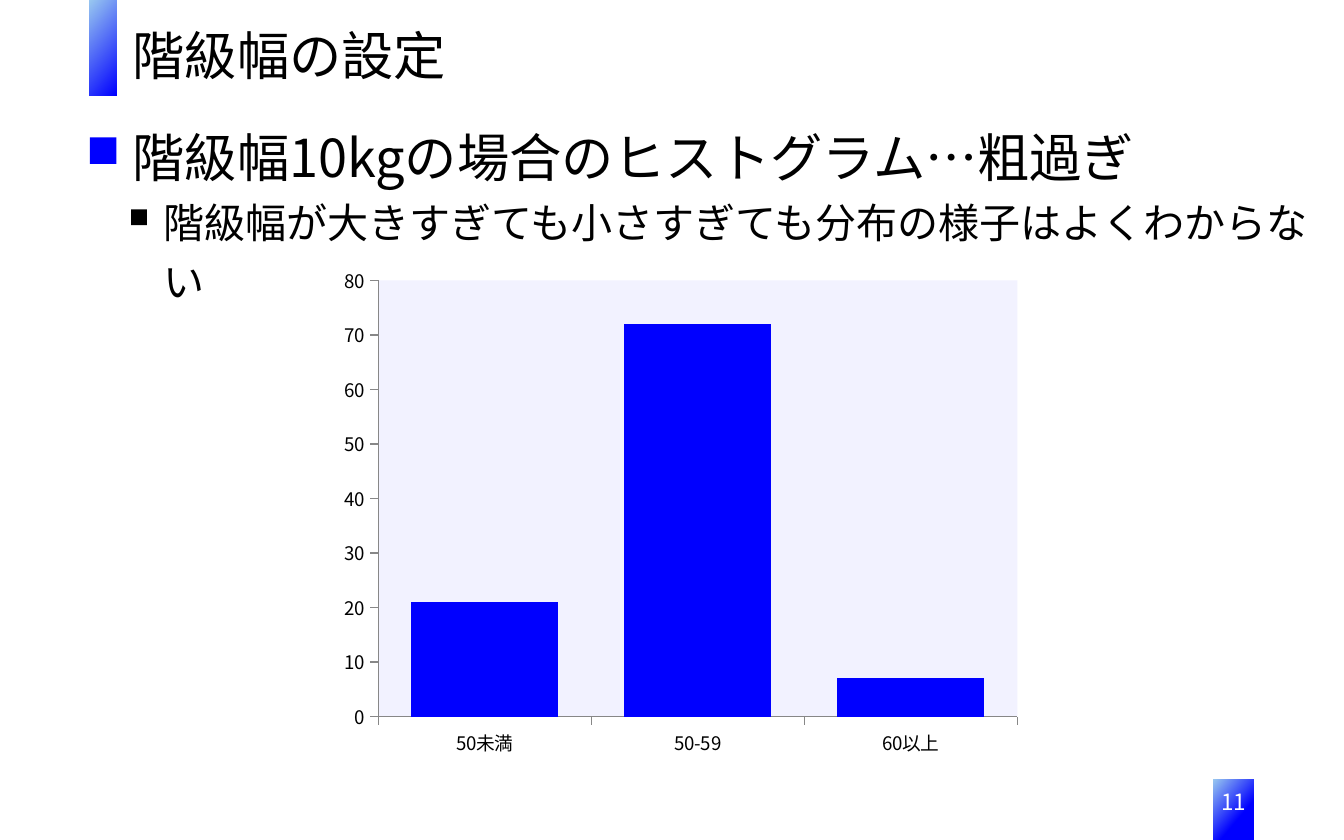
from dataclasses import dataclass

from pptx import Presentation
from pptx.chart.data import CategoryChartData
from pptx.dml.color import RGBColor
from pptx.enum.chart import XL_CHART_TYPE, XL_TICK_MARK
from pptx.enum.shapes import MSO_SHAPE
from pptx.enum.text import MSO_ANCHOR, PP_ALIGN
from pptx.oxml import parse_xml
from pptx.oxml.ns import nsdecls, qn
from pptx.oxml.xmlchemy import OxmlElement
from pptx.slide import Slide
from pptx.util import Cm, Pt


def colour(code):
    return RGBColor.from_string(code)


@dataclass
class SlideBuilder:
    """Holds the style and the slide being built."""

    slide: Slide
    font: str = "Noto Sans CJK JP"
    ink: str = "000000"
    accent: str = "0000FF"
    highlight: str = "99C8F0"
    plot_area: str = "F2F2FF"
    axis_line: str = "878787"

    def apply_east_asian_font(self, element):
        for latin in list(element.iter(qn("a:latin"))):
            east_asian = OxmlElement("a:ea")
            east_asian.set("typeface", self.font)
            latin.addnext(east_asian)

    def text(self, wording, box, size, code=None, align=PP_ALIGN.LEFT,
             anchor=MSO_ANCHOR.TOP, spacing=1.0):
        textbox = self.slide.shapes.add_textbox(*map(Cm, box))
        frame = textbox.text_frame
        frame.word_wrap = True
        frame.vertical_anchor = anchor
        frame.text = wording
        paragraph = frame.paragraphs[0]
        paragraph.alignment = align
        paragraph.line_spacing = spacing
        font = paragraph.runs[0].font
        font.name = self.font
        font.size = Pt(size)
        font.color.rgb = colour(code or self.ink)
        self.apply_east_asian_font(textbox.element)

    def shape(self, preset, box):
        shape = self.slide.shapes.add_shape(preset, *map(Cm, box))
        shape.shadow.inherit = False
        shape.line.fill.background()
        return shape

    def marker(self, left, top, side, code):
        marker = self.shape(MSO_SHAPE.RECTANGLE, (left, top, side, side))
        marker.fill.solid()
        marker.fill.fore_color.rgb = colour(code)

    def gradient_bar(self, box, start):
        bar = self.shape(MSO_SHAPE.ROUNDED_RECTANGLE, box)
        bar.adjustments[0] = 0
        bar.fill.gradient()
        bar.fill.gradient_angle = 140
        stops = zip(bar.fill.gradient_stops, (start, 1), (self.accent, self.highlight))
        for stop, position, code in stops:
            stop.position = position
            stop.color.rgb = colour(code)

    def histogram(self, frequencies, box):
        data = CategoryChartData()
        data.categories = list(frequencies)
        data.add_series("Series 1", list(frequencies.values()))
        chart = self.slide.shapes.add_chart(
            XL_CHART_TYPE.COLUMN_CLUSTERED, *map(Cm, box), data).chart
        chart.has_legend = False
        chart.has_title = False
        chart.font.size = Pt(10)
        chart.font.name = "Calibri"
        chart.font.color.rgb = colour(self.ink)
        for axis in (chart.category_axis, chart.value_axis):
            axis.has_major_gridlines = False
            axis.major_tick_mark = XL_TICK_MARK.OUTSIDE
            axis.minor_tick_mark = XL_TICK_MARK.NONE
            axis.format.line.color.rgb = colour(self.axis_line)
            axis.format.line.width = Pt(0.75)
            labels = axis.tick_labels.font
            labels.name = self.font
            labels.size = Pt(10)
            labels.color.rgb = colour(self.ink)
        chart.value_axis.minimum_scale = 0
        chart.value_axis.maximum_scale = 80
        chart.value_axis.major_unit = 10
        plot = chart.plots[0]
        plot.gap_width = 45
        plot.vary_by_categories = False
        bars = plot.series[0].format.fill
        bars.solid()
        bars.fore_color.rgb = colour(self.accent)
        self.frame_plot(chart, {"x": 0.11, "y": 0.03, "w": 0.81, "h": 0.82})
        self.apply_east_asian_font(chart.element if hasattr(chart, "element")
                                   else chart._chartSpace)

    def frame_plot(self, chart, portions):
        area = chart._chartSpace.chart.plotArea
        for layout in area.findall(qn("c:layout")):
            area.remove(layout)
        modes = "".join(f'<c:{side}Mode val="edge"/>' for side in "xy")
        sizes = "".join(f'<c:{side} val="{share}"/>' for side, share in portions.items())
        area.insert(0, parse_xml(
            f'<c:layout {nsdecls("c")}><c:manualLayout><c:layoutTarget val="inner"/>'
            f'{modes}{sizes}</c:manualLayout></c:layout>'))
        area.append(parse_xml(
            f'<c:spPr {nsdecls("c", "a")}><a:solidFill><a:srgbClr val="{self.plot_area}"/>'
            '</a:solidFill><a:ln><a:noFill/></a:ln></c:spPr>'))


def main():
    presentation = Presentation()
    presentation.slide_width = Cm(25.4)
    presentation.slide_height = Cm(15.88)
    builder = SlideBuilder(presentation.slides.add_slide(presentation.slide_layouts[6]))

    builder.gradient_bar((22.93, 14.73, 0.77, 1.15), 0.36)
    builder.text("11", (22.37, 14.78, 1.9, 0.84), 12, "FFFFFF", PP_ALIGN.CENTER)
    builder.gradient_bar((1.69, 0, 0.52, 1.81), 0)
    builder.histogram({"50未満": 21, "50-59": 72, "60以上": 7}, (5.51, 5, 14.91, 10.06))
    builder.text("階級幅10kgの場合のヒストグラム…粗過ぎ",
                 (2.26, 2, 23.14, 1.5), 28, spacing=1.2)
    builder.marker(1.7, 2.6, 0.5, builder.accent)
    builder.text("階級幅が大きすぎても小さすぎても分布の様子はよくわからない",
                 (2.84, 3.43, 22.56, 1.24), 22, spacing=1.2)
    builder.marker(2.48, 3.96, 0.3, builder.ink)
    builder.text("階級幅の設定", (2.26, 0.3, 23.09, 1.45), 28, anchor=MSO_ANCHOR.MIDDLE)

    presentation.save("out.pptx")


if __name__ == "__main__":
    main()
